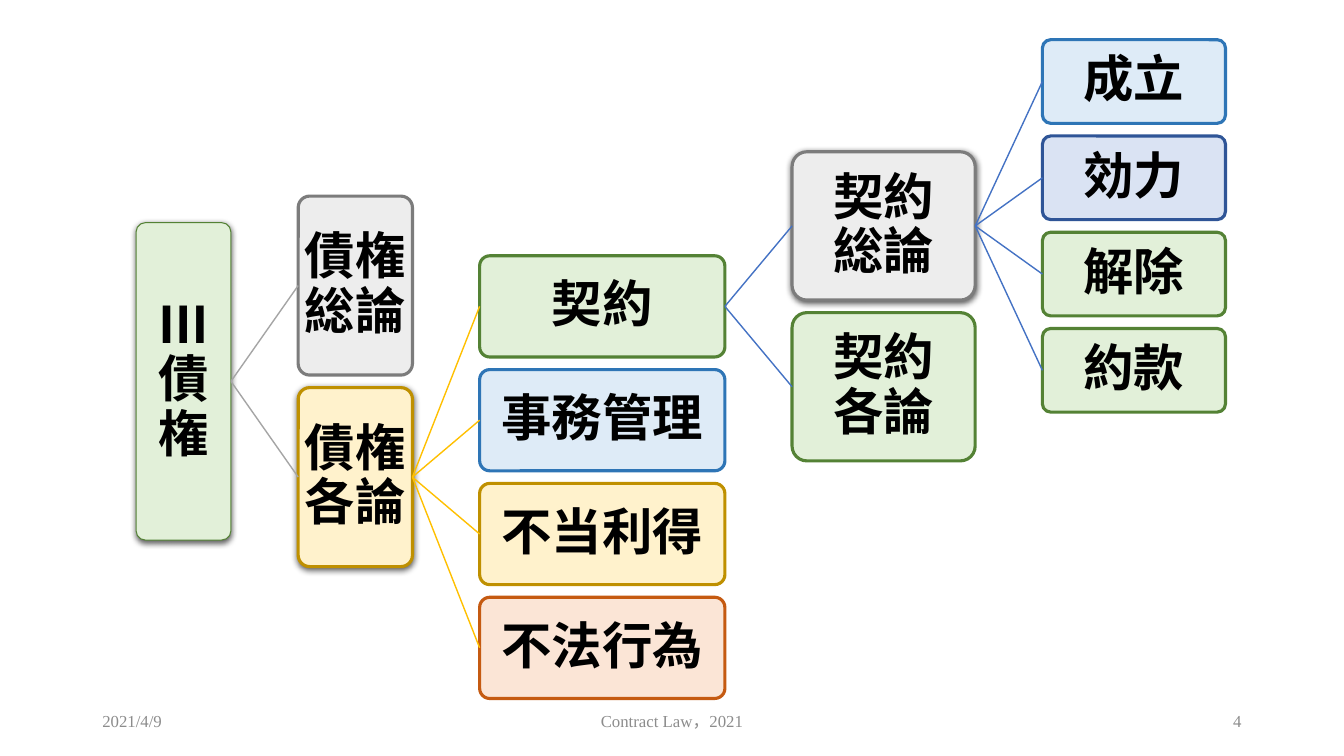
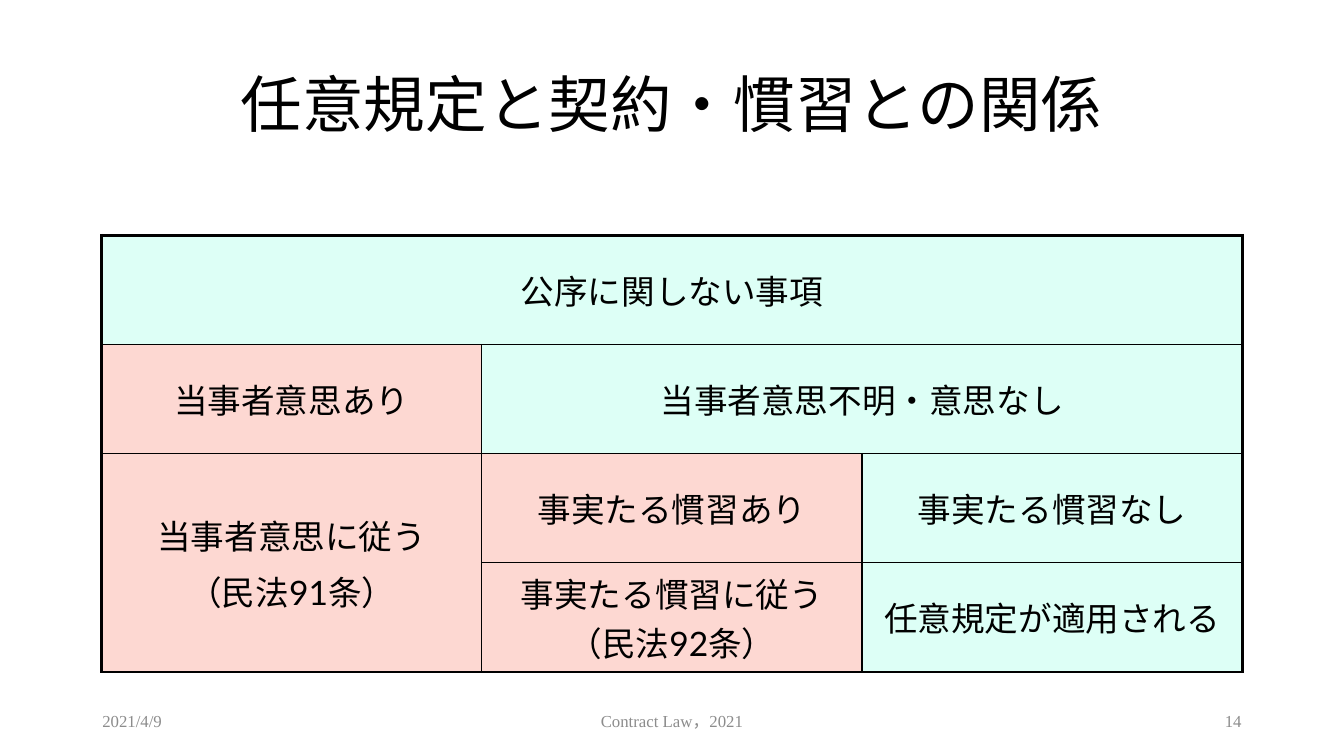
"""Build two contract law slides: a tree of obligations and a table of default rules."""
from itertools import product

from lxml.etree import SubElement
from pptx import Presentation
from pptx.dml.color import RGBColor
from pptx.enum.shapes import MSO_CONNECTOR, MSO_SHAPE
from pptx.enum.text import MSO_ANCHOR, PP_ALIGN
from pptx.oxml import parse_xml
from pptx.oxml.ns import nsdecls, qn
from pptx.util import Inches, Pt

CELL = Inches(1) // 12
COLUMNS, ROWS = 160, 90
MARGIN = 11
SERIF, SANS, JAPANESE = "Times New Roman", "Lato", "Noto Sans CJK JP"
BLACK, GREY = "000000", "8C8C8C"
LEFT, CENTER, RIGHT = PP_ALIGN.LEFT, PP_ALIGN.CENTER, PP_ALIGN.RIGHT


def paint(color_format, hex_color):
    color_format.rgb = RGBColor.from_string(hex_color)


def write(text_frame, text, size, font, hex_color=BLACK, alignment=CENTER,
          bold=False, line_spacing=1.0, space_before=0):
    text_frame.text = text
    text_frame.word_wrap = True
    for paragraph in text_frame.paragraphs:
        paragraph.alignment = alignment
        paragraph.line_spacing = line_spacing
        paragraph.space_before = Pt(space_before)
        for run in paragraph.runs:
            run.font.size = Pt(size)
            run.font.bold = bold
            run.font.name = font
            paint(run.font.fill.solid() or run.font.color, hex_color)
            SubElement(run.font._element, qn("a:ea"), typeface=JAPANESE)


presentation = Presentation()
presentation.slide_width = COLUMNS * CELL
presentation.slide_height = ROWS * CELL
blank_layout = presentation.slide_layouts[6]

tree_slide, rules_slide = [presentation.slides.add_slide(blank_layout) for _ in range(2)]
for slide, number in ((tree_slide, "4"), (rules_slide, "14")):
    for left, width, text, alignment in (
        (MARGIN, 36, "2021/4/9", LEFT),
        (53, 54, "Contract Law，2021", CENTER),
        (COLUMNS - MARGIN - 36, 36, number, RIGHT),
    ):
        footer = slide.shapes.add_textbox(
            left * CELL, int(83.4 * CELL), width * CELL, int(4.8 * CELL))
        footer.text_frame.vertical_anchor = MSO_ANCHOR.MIDDLE
        write(footer.text_frame, text, 12, SERIF, GREY, alignment)

green, grey = ("E2F0D9", "548235"), ("EDEDED", "7C7C7C")
yellow, blue = ("FFF2CC", "BF9000"), ("DEEBF7", "2E75B6")
indigo, orange = ("DAE3F3", "2F5597"), ("FBE5D6", "C55A11")
levels = [
    (11.3, 37.8, None, None, [("Ⅲ\v債\v権", green)]),
    (13.6, 21.3, "Ⅲ\v債\v権", "A5A5A5", [("債権\v総論", grey), ("債権\v各論", yellow)]),
    (29.2, 12.05, "債権\v各論", "FFC000",
     [("契約", green), ("事務管理", blue), ("不当利得", yellow), ("不法行為", orange)]),
    (21.8, 17.65, "契約", "4472C4", [("契約\v総論", grey), ("契約\v各論", green)]),
    (21.8, 9.96, "契約\v総論", "4472C4",
     [("成立", blue), ("効力", indigo), ("解除", green), ("約款", green)]),
]
parents = {level[2] for level in levels}
level_gap, sibling_gap = 8, 1.5
left, root_middle = 16.2, 45.4
nodes, middles = {}, {}

for width, height, parent, link_color, children in levels:
    pitch = height + sibling_gap
    first_middle = middles.get(parent, root_middle) - pitch * (len(children) - 1) / 2
    for index, (text, (fill_color, line_color)) in enumerate(children):
        middles[text] = first_middle + index * pitch
        node = tree_slide.shapes.add_shape(
            MSO_SHAPE.ROUNDED_RECTANGLE, int(left * CELL),
            int((middles[text] - height / 2) * CELL), int(width * CELL), int(height * CELL))
        nodes[text] = node
        node.adjustments[0] = 0.1
        node.fill.solid()
        paint(node.fill.fore_color, fill_color)
        paint(node.line.color, line_color)
        node.line.width = Pt(2.25 if parent else 0.75)
        node.shadow.inherit = False
        if text in parents and text != "契約":
            effects = node._element.spPr.find(qn("a:effectLst"))
            effects.append(parse_xml(
                f'<a:outerShdw {nsdecls("a")} blurRad="{Pt(4.5)}" dist="{Pt(1.5)}" '
                'dir="5400000" algn="ctr" rotWithShape="0"><a:srgbClr val="000000">'
                '<a:alpha val="63000"/></a:srgbClr></a:outerShdw>'))
        frame = node.text_frame
        frame.margin_left = frame.margin_right = frame.margin_top = frame.margin_bottom = 0
        frame.vertical_anchor = MSO_ANCHOR.MIDDLE
        write(frame, text, 36, SERIF, bold=True, line_spacing=0.9)
        if parent:
            link = tree_slide.shapes.add_connector(MSO_CONNECTOR.STRAIGHT, 0, 0, 0, 0)
            link.begin_connect(nodes[parent], 3)
            link.end_connect(node, 1)
            link.line.width = Pt(1)
            paint(link.line.color, link_color)
            SubElement(link._element.spPr, qn("a:effectLst"))
    left += width + level_gap

title = rules_slide.shapes.add_textbox(
    MARGIN * CELL, int(4.1 * CELL), (COLUMNS - 2 * MARGIN) * CELL, int(17.4 * CELL))
title.text_frame.vertical_anchor = MSO_ANCHOR.MIDDLE
write(title.text_frame, "任意規定と契約・慣習との関係", 44, JAPANESE, line_spacing=0.9)

mint, pink = "BDFFEE", "FCB2A6"
row_count, column_count = 4, 3
table = rules_slide.shapes.add_table(
    row_count, column_count, int(12.1 * CELL), 28 * CELL,
    int(135.8 * CELL), row_count * 13 * CELL).table
table.first_row = table.horz_banding = False
for row, column, row_span, column_span, hex_color, text in (
    (0, 0, 1, 3, mint, "公序に関しない事項"),
    (1, 0, 1, 1, pink, "当事者意思あり"),
    (1, 1, 1, 2, mint, "当事者意思不明・意思なし"),
    (2, 0, 2, 1, pink, "当事者意思に従う\n（民法91条）"),
    (2, 1, 1, 1, pink, "事実たる慣習あり"),
    (2, 2, 1, 1, mint, "事実たる慣習なし"),
    (3, 1, 1, 1, pink, "事実たる慣習に従う\v（民法92条）"),
    (3, 2, 1, 1, mint, "任意規定が適用される"),
):
    last_row, last_column = row + row_span - 1, column + column_span - 1
    origin = table.cell(row, column)
    if row_span * column_span > 1:
        origin.merge(table.cell(last_row, last_column))
    for r, c in product(range(row, last_row + 1), range(column, last_column + 1)):
        cell = table.cell(r, c)
        properties = cell._tc.get_or_add_tcPr()
        for side, faces_out, outer in (
            ("L", c == column, column == 0),
            ("R", c == last_column, last_column == column_count - 1),
            ("T", r == row, row == 0),
            ("B", r == last_row, last_row == row_count - 1),
        ):
            if faces_out or cell.is_merge_origin:
                properties.append(parse_xml(
                    f'<a:ln{side} {nsdecls("a")} w="{Pt(2.25 if outer else 1)}"><a:solidFill>'
                    f'<a:srgbClr val="{BLACK}"/></a:solidFill></a:ln{side}>'))
        cell.fill.solid()
        paint(cell.fill.fore_color, hex_color)
        fill_color = properties.find(qn("a:solidFill")).find(qn("a:srgbClr"))
        SubElement(fill_color, qn("a:alpha"), val="50000")
    origin.margin_top = origin.margin_bottom = 0
    origin.vertical_anchor = MSO_ANCHOR.MIDDLE
    write(origin.text_frame, text, 24, SANS, space_before=5)

presentation.save("out.pptx")
